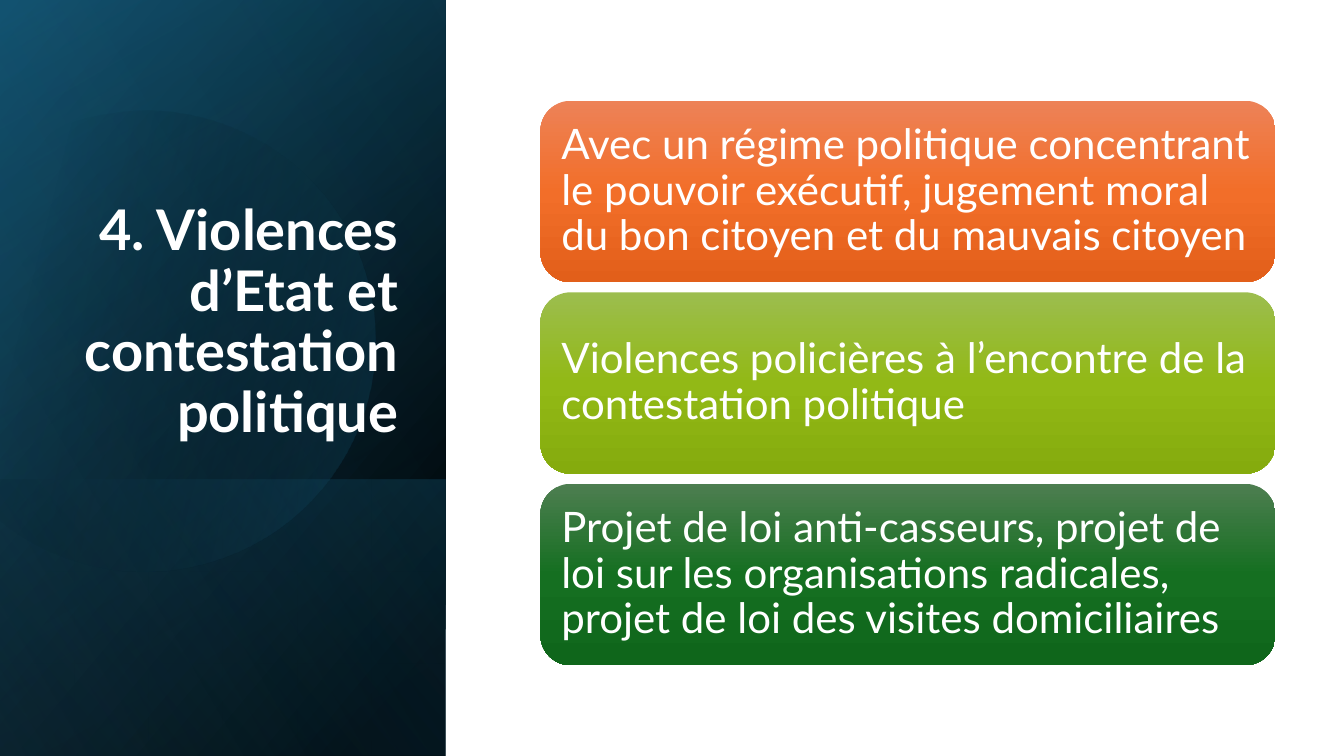
from math import cos, radians, sin

from lxml.etree import SubElement
from pptx import Presentation
from pptx.dml.color import RGBColor
from pptx.enum.shapes import MSO_SHAPE as Shape
from pptx.enum.text import MSO_ANCHOR as Anchor, MSO_AUTO_SIZE as AutoSize, PP_ALIGN as Align
from pptx.oxml.ns import qn
from pptx.util import Inches, Pt

FONT = "Lato"
WHITE = RGBColor(0xFF, 0xFF, 0xFF)
BLACK = RGBColor(0x00, 0x00, 0x00)
NAVY = RGBColor(0x10, 0x48, 0x62)
TEAL = RGBColor(0x15, 0x60, 0x82)
SKY = RGBColor(0x46, 0xB1, 0xE1)
ORANGES = [RGBColor(0xED, 0x82, 0x57), RGBColor(0xF2, 0x6E, 0x29), RGBColor(0xE2, 0x5F, 0x1A)]
LIMES = [RGBColor(0x9C, 0xBD, 0x4E), RGBColor(0x92, 0xB9, 0x16), RGBColor(0x85, 0xAB, 0x0D)]
GREENS = [RGBColor(0x4D, 0x7E, 0x50), RGBColor(0x15, 0x6F, 0x21), RGBColor(0x0F, 0x66, 0x1B)]

TITLE = "4. Violences d’Etat et contestation politique"
CARDS = [
    ("Avec un régime politique concentrant le pouvoir exécutif, "
     "jugement moral du bon citoyen et du mauvais citoyen", ORANGES),
    ("Violences policières à l’encontre de la contestation politique", LIMES),
    ("Projet de loi anti-casseurs, projet de loi sur les organisations radicales, "
     "projet de loi des visites domiciliaires", GREENS),
]

# Disc cut off by the slide's left edge, relative to the panel's corner
DISC_CENTER = (1.585, 3.345)
DISC_ROTATION = -16.1
DISC_START = (1.49, 1.1)
DISC_CURVES = [
    [(2.46, 1.12), (3.35, 1.77), (3.63, 2.75)],
    [(3.98, 3.97), (3.28, 5.23), (2.07, 5.58)],
    [(1.31, 5.8), (0.53, 5.61), (-0.03, 5.14)],
    [(-0.15, 5.03)],
    [(-0.15, 1.75)],
    [(0, 1.61)],
    [(0.23, 1.42), (0.5, 1.28), (0.8, 1.19)],
    [(1.03, 1.13), (1.26, 1.1), (1.49, 1.1)],
]


def fill_gradient(shape, stops, angle):
    """Fill with (position %, colour, opacity %) stops, angle clockwise; no line or shadow."""
    shape.shadow.inherit = False
    shape.line.fill.background()
    shape.fill.background()
    properties = shape.element.spPr
    no_fill = properties.find(qn("a:noFill"))
    gradient = SubElement(properties, qn("a:gradFill"), rotWithShape="1")
    properties.replace(no_fill, gradient)
    stop_list = SubElement(gradient, qn("a:gsLst"))
    for position, color, opacity in stops:
        stop = SubElement(stop_list, qn("a:gs"), pos=str(position * 1000))
        rgb = SubElement(stop, qn("a:srgbClr"), val=str(color))
        if opacity < 100:
            SubElement(rgb, qn("a:alpha"), val=str(opacity * 1000))
    SubElement(gradient, qn("a:lin"), ang=str(angle * 60000), scaled="0")


def add_turned_layer(slide, left, top, width, height, stops, angle):
    """Cover the box with a mirrored rectangle turned a quarter."""
    layer = slide.shapes.add_shape(
        Shape.RECTANGLE,
        Inches(left + (width - height) / 2), Inches(top + (height - width) / 2),
        Inches(height), Inches(width))
    layer.rotation = 90
    layer.element.spPr.find(qn("a:xfrm")).set("flipH", "1")
    fill_gradient(layer, stops, angle)


def disc_outline(steps=24):
    """Points of the disc, with its curves sampled."""
    points = [DISC_START]
    for segment in DISC_CURVES:
        if len(segment) == 1:
            points += segment
            continue
        controls = [points[-1], *segment]
        for step in range(1, steps + 1):
            t = step / steps
            weights = ((1 - t) ** 3, 3 * t * (1 - t) ** 2, 3 * t * t * (1 - t), t ** 3)
            points.append(tuple(
                sum(weight * control[axis] for weight, control in zip(weights, controls))
                for axis in (0, 1)))
    return points


def add_disc(slide, left, top):
    center_x, center_y = DISC_CENTER
    turn = radians(-DISC_ROTATION)
    points = []
    for x, y in disc_outline():
        dx, dy = x - center_x, y - center_y
        points.append((Inches(left + center_x + dx * cos(turn) - dy * sin(turn)),
                       Inches(top + center_y + dx * sin(turn) + dy * cos(turn))))
    builder = slide.shapes.build_freeform(*points[0])
    builder.add_line_segments(points[1:], close=True)
    disc = builder.convert_to_shape()
    disc.rotation = DISC_ROTATION
    fill_gradient(disc, [(29, BLACK, 0), (100, TEAL, 43)], 30)


def add_panel(slide, left, top, width, height):
    box = (left, top, width, height)
    foot_height = 2.74
    foot = (left, top + height - foot_height, width, foot_height)
    add_turned_layer(slide, *box, [(8, BLACK, 100), (100, NAVY, 100)], 50)
    add_turned_layer(slide, *box, [(0, BLACK, 0), (99, TEAL, 46)], 30)
    add_turned_layer(slide, *foot, [(2, TEAL, 29), (100, BLACK, 30)], 130)
    add_disc(slide, left, top)
    add_turned_layer(slide, *box, [(0, BLACK, 0), (99, SKY, 11)], 120)


def write_text(shape, text, size, align, anchor, bold=False):
    frame = shape.text_frame
    frame.text = text
    frame.word_wrap = True
    frame.auto_size = AutoSize.NONE
    frame.vertical_anchor = anchor
    paragraph = frame.paragraphs[0]
    paragraph.alignment = align
    paragraph.line_spacing = 0.9
    font = paragraph.font
    font.name, font.size, font.bold = FONT, Pt(size), bold
    font.color.rgb = WHITE


def place_title(slide, left, top, width, height):
    title = slide.shapes.title
    title.left, title.top = Inches(left), Inches(top)
    title.width, title.height = Inches(width), Inches(height)
    write_text(title, TITLE, 40, Align.RIGHT, Anchor.BOTTOM, bold=True)
    # Bring the title in front of the panel
    title.element.getparent().append(title.element)


def add_cards(slide, left, top, width, height, gap=0.1):
    card_height = (height - gap * (len(CARDS) - 1)) / len(CARDS)
    for index, (text, colors) in enumerate(CARDS):
        card = slide.shapes.add_shape(
            Shape.ROUNDED_RECTANGLE,
            Inches(left), Inches(top + index * (card_height + gap)),
            Inches(width), Inches(card_height))
        fill_gradient(card, [(50 * i, color, 100) for i, color in enumerate(colors)], 90)
        write_text(card, text, 30, Align.LEFT, Anchor.MIDDLE)
        # The rounded corners already inset the text by about 0.09 inch
        frame = card.text_frame
        frame.margin_left = frame.margin_right = Inches(0.12)
        frame.margin_top = frame.margin_bottom = Inches(0.12)


def main():
    presentation = Presentation()
    presentation.slide_width, presentation.slide_height = Inches(13.33), Inches(7.5)
    slide = presentation.slides.add_slide(presentation.slide_layouts[5])
    add_panel(slide, 0, 0, 4.42, 7.5)
    place_title(slide, 0.64, 1.84, 3.41, 2.62)
    add_cards(slide, 5.36, 1, 7.29, 5.6)
    presentation.save("out.pptx")


if __name__ == "__main__":
    main()
